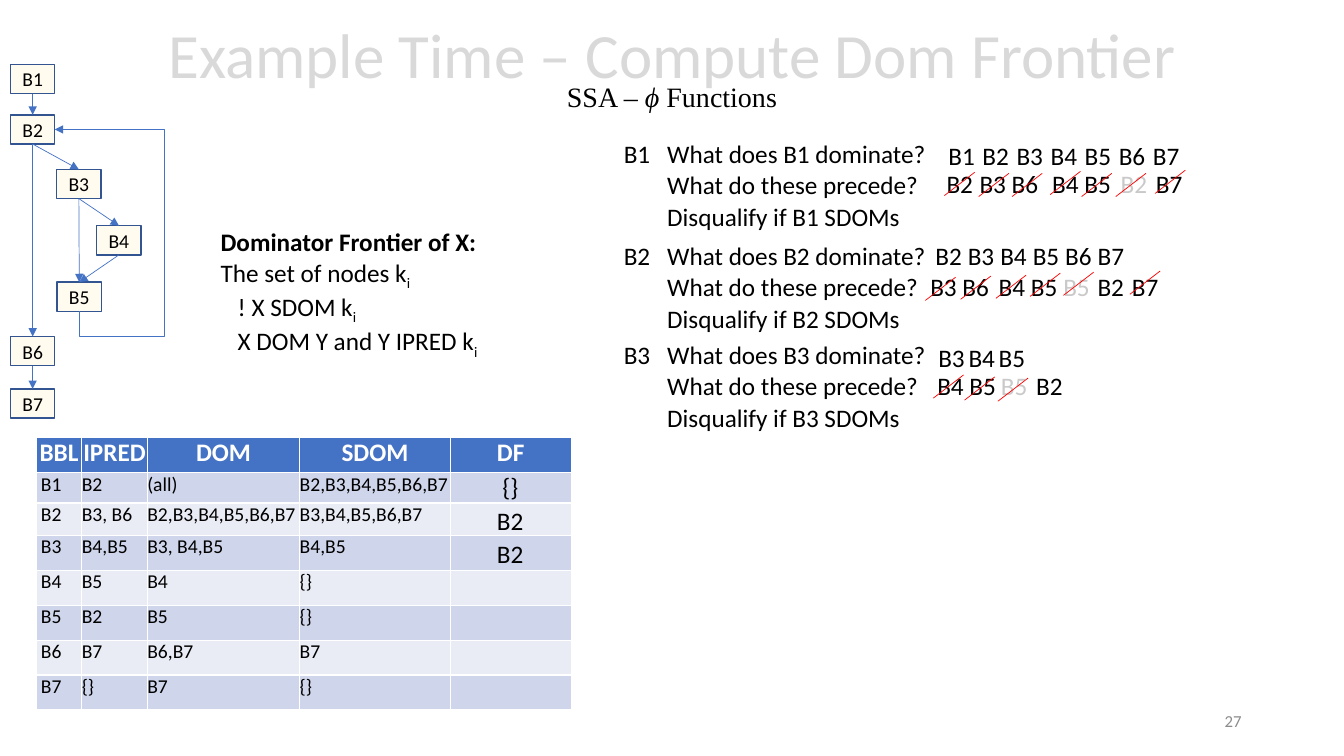
from collections import namedtuple

from lxml.etree import SubElement
from pptx import Presentation
from pptx.dml.color import RGBColor
from pptx.enum.shapes import MSO_CONNECTOR, MSO_SHAPE
from pptx.enum.text import MSO_ANCHOR, MSO_AUTO_SIZE, PP_ALIGN
from pptx.oxml.ns import qn
from pptx.util import Pt

COLORS = {
    "black": "000000", "white": "FFFFFF", "title": "D9D9D9", "number": "8C8C8C",
    "faded": "C9C9C9", "blue": "4472C4", "node": "FFF2CC", "node_line": "325491",
    "band_dark": "CFD5EA", "band_light": "E9EBF5", "strike": "FF0000",
}
Box = namedtuple("Box", "left top width height")

NODE_SIZE = (31.7, 20.9)
NODES = {
    "B1": (0, 0), "B2": (0, 36), "B3": (33, 75), "B4": (61.6, 115.2),
    "B5": (33.3, 155.5), "B6": (0, 194.4), "B7": (0, 231.8),
}
EDGES = ["B1 B2", "B2 B6", "B6 B7", "B2 B3", "B3 B4", "B4 B5", "B3 B5"]

COLUMNS = [32.4, 46.8, 108.9, 107.5, 86.4]
ROWS = [25.2, 21.6, 23] + [25] * 5
TABLE = [
    ["BBL", "IPRED", "DOM", "SDOM", "DF"],
    ["B1", "B2", "(all)", "B2,B3,B4,B5,B6,B7", ""],
    ["B2", "B3, B6", "B2,B3,B4,B5,B6,B7", "B3,B4,B5,B6,B7", ""],
    ["B3", "B4,B5", "B3, B4,B5", "B4,B5", ""],
    ["B4", "B5", "B4", "{}", ""],
    ["B5", "B2", "B5", "{}", ""],
    ["B6", "B7", "B6,B7", "B7", ""],
    ["B7", "{}", "B7", "{}", ""],
]
FRONTIERS = ["{}", "B2", "B2"]

# Offsets are measured from the corner of each question block.
Question = namedtuple("Question", "node dominated start step drop preceded strikes")
QUESTIONS = [
    (Box(438.5, 95, 415, 75), Question(
        "B1", "B1 B2 B3 B4 B5 B6 B7", 231.8, 24.35, 1.5,
        [("B2", 230.5, "black"), ("B3 B6", 254.1, "black"), ("B4 B5", 306, "black"),
         ("B2", 354.9, "faded"), ("B7", 380.1, "black")],
        [(236.1, 44.7), (260.6, 45.4), (284.4, 45.4), (311.7, 44),
         (334.1, 45.4), (358.5, 45.4), (386.6, 43.2)])),
    (Box(438.5, 168.3, 415, 75), Question(
        "B2", "B2 B3 B4 B5 B6 B7", 222.5, 23.2, 0,
        [("B3 B6", 218.9, "black"), ("B4 B5", 267.8, "black"), ("B5", 313.9, "faded"),
         ("B2", 338.4, "black"), ("B7", 362.9, "black")],
        [(222.5, 46.3), (247.7, 45.5), (272.9, 44.8), (297.3, 43.4),
         (321.1, 42.7), (368.6, 41.9)])),
    (Box(438.5, 239, 415, 75), Question(
        "B3", "B3 B4 B5", 224.6, 21.6, 2.2,
        [("B4 B5", 223.9, "black"), ("B5", 269.3, "faded"), ("B2", 294.5, "black")],
        [(228.2, 45.4), (250.5, 46.8), (274.3, 47.6)])),
]


def color(name):
    return RGBColor.from_string(COLORS[name])


def add_span(para, text, size, shade="black", face="Calibri", bold=False, italic=False):
    span = para.add_run()
    span.text = text
    font = span.font
    font.name, font.size, font.bold, font.italic = face, Pt(size), bold, italic
    font.color.rgb = color(shade)
    return span


def add_label(page, box, text, size=18, shade="black", align=PP_ALIGN.LEFT):
    label = page.shapes.add_textbox(*map(Pt, box))
    label.text_frame.word_wrap = False
    para = label.text_frame.paragraphs[0]
    para.alignment = align
    add_span(para, text, size, shade)
    return label


def style_line(connector, shade, arrow=False):
    connector.line.color.rgb = color(shade)
    connector.line.width = Pt(0.5)
    if arrow:
        SubElement(connector.line._get_or_add_ln(), qn("a:tailEnd"), type="triangle")
    SubElement(connector._element.spPr, qn("a:effectLst"))


def add_title(page, box):
    title = page.shapes.title
    title.left, title.top, title.width, title.height = map(Pt, box)
    frame = title.text_frame
    frame.auto_size = MSO_AUTO_SIZE.NONE
    frame.vertical_anchor = MSO_ANCHOR.MIDDLE
    para = frame.paragraphs[0]
    para.alignment = PP_ALIGN.CENTER
    para.line_spacing = 0.7
    add_span(para, "Example Time – Compute Dom Frontier", 45, "title")
    para.add_line_break()
    for text, italic in [("SSA – ", False), ("ϕ", True), (" Functions", False)]:
        add_span(para, text, 20, face="Times New Roman", italic=italic)


def add_frontier_table(page, box):
    table = page.shapes.add_table(len(ROWS), len(COLUMNS), *map(Pt, box)).table
    for column, width in zip(table.columns, COLUMNS):
        column.width = Pt(width)
    for index, (row, height) in enumerate(zip(table.rows, ROWS)):
        row.height = Pt(height)
        header = index == 0
        fill = "blue" if header else ("band_light", "band_dark")[index % 2]
        for position, (cell, text) in enumerate(zip(row.cells, TABLE[index])):
            cell.margin_left = cell.margin_right = cell.margin_top = cell.margin_bottom = 0
            if position == 0 and not header:
                cell.margin_left = Pt(3.2)
            cell.fill.solid()
            cell.fill.fore_color.rgb = color(fill)
            para = cell.text_frame.paragraphs[0]
            para.alignment = PP_ALIGN.CENTER if header else PP_ALIGN.LEFT
            add_span(para, text, 18 if header else 14,
                     "white" if header else "black", bold=header)
    for index, text in enumerate(FRONTIERS):
        width = 26 if text == "{}" else 34
        center = box.left + sum(COLUMNS[:-1]) + COLUMNS[-1] / 2
        add_label(page, Box(center - width / 2, box.top + 20.9 + 23.8 * index, width, 29), text)


def add_node(page, box, name):
    node = page.shapes.add_shape(MSO_SHAPE.RECTANGLE, *map(Pt, box))
    node.shadow.inherit = False
    node.fill.solid()
    node.fill.fore_color.rgb = color("node")
    SubElement(node._element.spPr.find(".//" + qn("a:srgbClr")), qn("a:alpha"), val="30000")
    node.line.color.rgb = color("node_line")
    node.line.width = Pt(1)
    node.text_frame.vertical_anchor = MSO_ANCHOR.MIDDLE
    para = node.text_frame.paragraphs[0]
    para.alignment = PP_ALIGN.CENTER
    add_span(para, name, 14)
    return node


def join(page, kind, start, start_side, end, end_side):
    connector = page.shapes.add_connector(kind, 0, 0, 0, 0)
    connector.begin_connect(start, start_side)
    connector.end_connect(end, end_side)
    style_line(connector, "blue", arrow=True)
    return connector


def route_back_edge(connector):
    """Lead the elbow down, out to the right and up, as a quarter-turned four-part bend."""
    left, top, across, rise = connector.left, connector.top, connector.width, connector.height
    connector.left = left + (across - rise) // 2
    connector.top = top + (rise - across) // 2
    connector.width, connector.height = rise, across
    xfrm = connector._element.spPr.find(qn("a:xfrm"))
    xfrm.attrib.clear()
    xfrm.set("rot", "5400000")
    xfrm.set("flipH", "1")
    bend = connector._element.spPr.find(qn("a:prstGeom"))
    bend.set("prst", "bentConnector4")
    guides = bend.find(qn("a:avLst"))
    for name, value in [("adj1", -13800), ("adj2", -348300)]:
        SubElement(guides, qn("a:gd"), name=name, fmla=f"val {value}")


def add_flow_graph(page, box):
    nodes = {name: add_node(page, Box(box.left + x, box.top + y, *NODE_SIZE), name)
             for name, (x, y) in NODES.items()}
    for edge in EDGES:
        start, end = edge.split()
        join(page, MSO_CONNECTOR.STRAIGHT, nodes[start], 2, nodes[end], 0)
    route_back_edge(join(page, MSO_CONNECTOR.ELBOW, nodes["B5"], 2, nodes["B2"], 3))


def add_definition(page, box):
    frame = page.shapes.add_textbox(*map(Pt, box)).text_frame
    frame.word_wrap = True
    add_span(frame.paragraphs[0], "Dominator Frontier of X:", 18, bold=True)
    for text, indent in [("The set of nodes k", 0), ("! X SDOM k", 12.2),
                         ("X DOM Y and Y IPRED k", 12.2)]:
        para = frame.add_paragraph()
        para._p.get_or_add_pPr().set("marL", str(Pt(indent)))
        add_span(para, text, 18)
        add_span(para, "i", 18)._r.get_or_add_rPr().set("baseline", "-25000")


def add_question(page, box, question):
    def put(text, x, y, width, shade="black"):
        add_label(page, Box(box.left + x, box.top + y, width, 29), text, shade=shade)

    node = question.node
    put(node, 0, 0, 34)
    put(f"What does {node} dominate?", 31, 0, 201)
    put("What do these precede?", 31, 22.2, 196)
    put(f"Disqualify if {node} SDOMs", 31, 45, 182)
    for index, name in enumerate(question.dominated.split()):
        put(name, question.start + index * question.step, question.drop, 34)
    for text, x, shade in question.preceded:
        put(text, x, 22, 57 if " " in text else 34, shade)
    for x, y in question.strikes:
        left, bottom = box.left + x, box.top + y
        strike = page.shapes.add_connector(
            MSO_CONNECTOR.STRAIGHT, *map(Pt, (left, bottom, left + 21.6, bottom - 16.6)))
        style_line(strike, "strike")


def main():
    deck = Presentation()
    deck.slide_width, deck.slide_height = Pt(960), Pt(540)
    page = deck.slides.add_slide(deck.slide_layouts[5])
    add_title(page, Box(0, 0.7, 960, 104.4))
    number = add_label(page, Box(678, 500.4, 216, 28.8), "27", 12, "number", PP_ALIGN.RIGHT)
    number.text_frame.word_wrap = True
    number.text_frame.vertical_anchor = MSO_ANCHOR.MIDDLE
    add_frontier_table(page, Box(26, 312.5, sum(COLUMNS), sum(ROWS)))
    add_flow_graph(page, Box(7.5, 46, 110, 253))
    add_definition(page, Box(150.5, 158.4, 264, 94.3))
    for box, question in QUESTIONS:
        add_question(page, box, question)
    deck.save("out.pptx")


if __name__ == "__main__":
    main()
